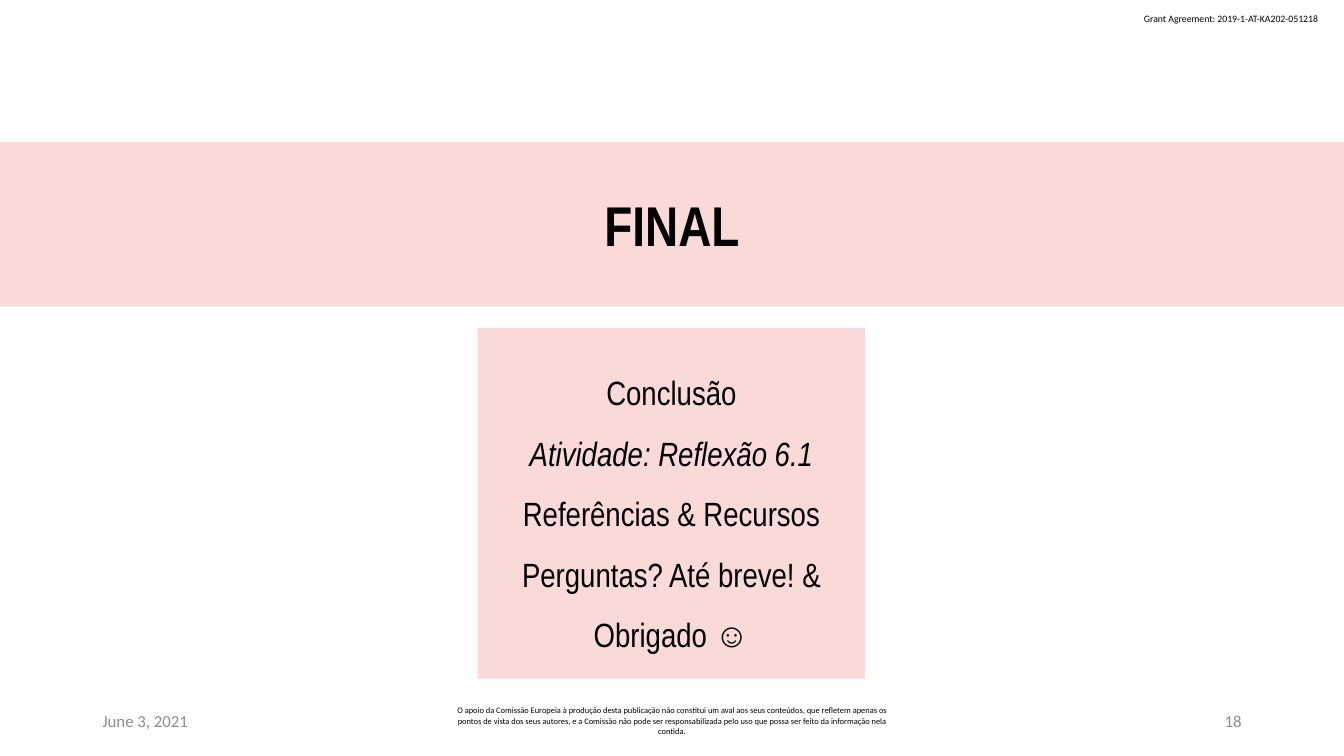
from pptx import Presentation
from pptx import util as u
from pptx.dml.color import RGBColor
from pptx.enum import shapes, text

BLACK = RGBColor(0x00, 0x00, 0x00)
GREY = RGBColor(0x8C, 0x8C, 0x8C)
PINK = RGBColor(0xF9, 0xDA, 0xD9)
LEFT, CENTER, RIGHT = (text.PP_ALIGN.LEFT, text.PP_ALIGN.CENTER,
                       text.PP_ALIGN.RIGHT)


class SlideBuilder:
    body_font = "Calibri"
    display_font = "Arial Narrow"

    def __init__(self, prs):
        self.s = prs.slides.add_slide(prs.slide_layouts[6])

    def set_lines(self, tf, lines, font, size, color, align):
        """Fill a text frame with one paragraph per line."""
        for i, line in enumerate(lines):
            p = tf.paragraphs[0] if i == 0 else tf.add_paragraph()
            p.text = line
            p.alignment = align
            p.font.name = font
            p.font.size = u.Pt(size)
            p.font.color.rgb = color

    def label(self, box, line, size, color=BLACK, align=LEFT, wrap=True,
              anchor=text.MSO_ANCHOR.MIDDLE):
        tf = self.s.shapes.add_textbox(*map(u.Cm, box)).text_frame
        tf.word_wrap = wrap
        tf.vertical_anchor = anchor
        self.set_lines(tf, [line], self.body_font, size, color, align)

    def panel(self, box, lines, size):
        """Add a pink rectangle with centred text and return its paragraphs."""
        sp = self.s.shapes.add_shape(shapes.MSO_SHAPE.RECTANGLE,
                                     *map(u.Cm, box))
        sp.shadow.inherit = False
        sp.fill.solid()
        sp.fill.fore_color.rgb = PINK
        sp.line.fill.background()
        tf = sp.text_frame
        tf.word_wrap = True
        tf.vertical_anchor = text.MSO_ANCHOR.MIDDLE
        tf.margin_left = tf.margin_right = u.Cm(0.33)
        tf.margin_top = tf.margin_bottom = u.Cm(0.18)
        self.set_lines(tf, lines, self.display_font, size, BLACK, CENTER)
        return tf.paragraphs


def main():
    prs = Presentation()
    prs.slide_width, prs.slide_height = u.Cm(33.87), u.Cm(19.05)
    slide = SlideBuilder(prs)

    slide.label((28.58, 0.2, 5, 0.56),
                "Grant Agreement: 2019-1-AT-KA202-051218", 7,
                wrap=False, anchor=text.MSO_ANCHOR.TOP)

    footer_top, footer_height = 17.65, 1.02
    disclaimer = (
        "O apoio da Comissão Europeia à produção desta publicação não "
        "constitui um aval aos seus conteúdos, que refletem apenas os pontos "
        "de vista dos seus autores, e a Comissão não pode ser "
        "responsabilizada pelo uso que possa ser feito da informação nela "
        "contida.")
    for left, width, line, size, color, align in (
            (2.33, 7.62, "June 3, 2021", 12, GREY, LEFT),
            (11.22, 11.43, disclaimer, 6, BLACK, CENTER),
            (23.92, 7.62, "18", 12, GREY, RIGHT)):
        slide.label((left, footer_top, width, footer_height),
                    line, size, color, align)

    title, = slide.panel((0, 3.58, 33.87, 4.14), ["FINAL"], 40)
    title.font.bold = True

    agenda = slide.panel((12.04, 8.26, 9.76, 8.84), [
        "Conclusão",
        "Atividade: Reflexão 6.1",
        "Referências & Recursos",
        "Perguntas? Até breve! & Obrigado ☺",
    ], 24)
    for p in agenda:
        p.line_spacing = 1.5
    agenda[1].font.italic = True

    prs.save("out.pptx")


if __name__ == "__main__":
    main()
